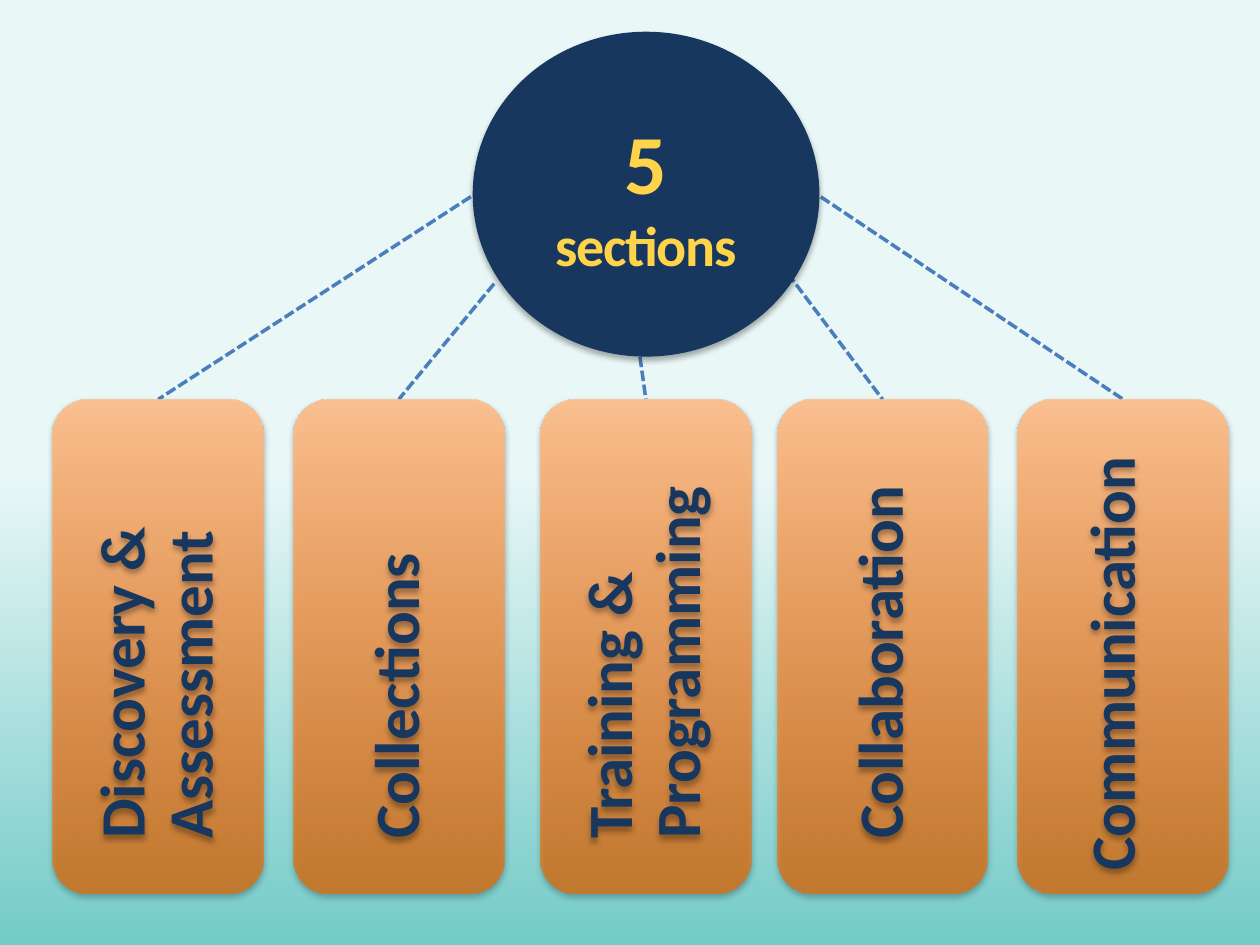
from dataclasses import dataclass

from lxml import etree
from pptx import Presentation
from pptx.dml.color import RGBColor
from pptx.enum.dml import MSO_LINE
from pptx.enum.shapes import MSO_CONNECTOR, MSO_SHAPE
from pptx.enum.text import MSO_ANCHOR, PP_ALIGN
from pptx.oxml.ns import qn
from pptx.util import Cm, Pt

STRAIGHT = MSO_CONNECTOR.STRAIGHT
ELLIPSE, ROUNDED = MSO_SHAPE.OVAL, MSO_SHAPE.ROUNDED_RECTANGLE
DASH = MSO_LINE.SQUARE_DOT
MIDDLE = MSO_ANCHOR.MIDDLE
CENTER, LEFT = PP_ALIGN.CENTER, PP_ALIGN.LEFT
TOP_SIDE = 0


@dataclass(frozen=True)
class Theme:
    font: str = "Calibri"
    navy: RGBColor = RGBColor.from_string("17375E")
    yellow: RGBColor = RGBColor.from_string("FFD44B")
    line: RGBColor = RGBColor.from_string("4B7EBC")
    teal: RGBColor = RGBColor.from_string("74CBC8")
    pale: RGBColor = RGBColor.from_string("E9F7F7")
    peach: RGBColor = RGBColor.from_string("FAC090")
    orange: RGBColor = RGBColor.from_string("E46C0A")
    number_size: Pt = Pt(48)
    word_size: Pt = Pt(32)
    label_size: Pt = Pt(36)


theme = Theme()


def add_shadow(shape):
    """Give the shape a soft shadow that falls straight down."""
    shape.shadow.inherit = False
    effects = shape._element.spPr.find(qn("a:effectLst"))
    outer = etree.SubElement(effects, qn("a:outerShdw"), blurRad="44450",
                             dist="27940", dir="5400000", rotWithShape="0")
    black = etree.SubElement(outer, qn("a:srgbClr"), val="000000")
    etree.SubElement(black, qn("a:alpha"), val="32000")


def add_span(para, text, size, color):
    """Add a bold run of text to the paragraph."""
    span = para.add_run()
    span.text = text
    for name, value in {"name": theme.font, "size": size, "bold": True}.items():
        setattr(span.font, name, value)
    span.font.color.rgb = color
    return span


deck = Presentation()
deck.slide_width, deck.slide_height = Cm(25.4), Cm(19.05)
page = deck.slides.add_slide(deck.slide_layouts[6])

# Background: teal at the bottom, pale from the middle up
backdrop = page.background.fill
backdrop.gradient()
backdrop.gradient_angle = 90
for stop, position, color in zip(backdrop.gradient_stops, (0, 0.5),
                                 (theme.teal, theme.pale)):
    stop.position, stop.color.rgb = position, color

# Sections: label, box left, line start, label length, label shift from box centre
sections = [
    ("Discovery & Assessment", 1.07, (9.73, 3.81), 7.82, (0, 0)),
    ("Collections", 5.92, (9.96, 5.72), 7.82, (0, 0)),
    ("Training & Programming", 10.9, (12.9, 7.19), 7.82, (0, 0)),
    ("Collaboration", 15.67, (15.88, 5.51), 7.82, (0, 0)),
    ("Communication", 20.52, (16.31, 3.81), 8.89, (-0.17, 0.1)),
]
box_top, box_width, box_height = 8.05, 4.24, 9.96
label_height = 2.21

# Dashed lines, behind everything else
connectors = []
for label, left, (start_x, start_y), length, shift in sections:
    connector = page.shapes.add_connector(
        STRAIGHT, Cm(start_x), Cm(start_y), Cm(left + box_width / 2), Cm(box_top))
    connector.line.color.rgb = theme.line
    for name, value in {"width": Pt(2), "dash_style": DASH}.items():
        setattr(connector.line, name, value)
    etree.SubElement(connector._element.spPr, qn("a:effectLst"))
    connectors.append(connector)

# Circle with the number of sections
circle = page.shapes.add_shape(ELLIPSE, Cm(9.53), Cm(0.64), Cm(6.99), Cm(6.55))
circle.fill.solid()
circle.fill.fore_color.rgb = theme.navy
circle.line.fill.background()
add_shadow(circle)
frame = circle.text_frame
for name, value in {"margin_left": 0, "margin_right": 0, "margin_top": 0,
                    "margin_bottom": 0, "vertical_anchor": MIDDLE,
                    "word_wrap": True}.items():
    setattr(frame, name, value)
para = frame.paragraphs[0]
para.alignment = CENTER
number = add_span(para, "5", theme.number_size, theme.yellow)
para.add_line_break()
word = add_span(para, "sections", theme.word_size, theme.yellow)
for span in (number, word):
    span.font._element.set("spc", "-70")

# Section boxes, each grouped with its upright label
inset = Cm(0.03)
for connector, (label, left, start, length, (shift_x, shift_y)) in zip(connectors, sections):
    group = page.shapes.add_group_shape()
    box = group.shapes.add_shape(ROUNDED, Cm(left), Cm(box_top),
                                 Cm(box_width), Cm(box_height))
    box.fill.gradient()
    box.fill.gradient_angle = 270
    for stop, position, color in zip(box.fill.gradient_stops, (0, 0.98),
                                     (theme.peach, theme.orange)):
        stop.position, stop.color.rgb = position, color
    orange = box._element.spPr.findall(".//" + qn("a:srgbClr"))[-1]
    etree.SubElement(orange, qn("a:alpha"), val="73000")
    box.line.fill.background()
    add_shadow(box)
    connector.end_connect(box, TOP_SIDE)

    center_x = left + box_width / 2 + shift_x
    center_y = box_top + box_height / 2 + shift_y
    caption = group.shapes.add_textbox(
        Cm(center_x - length / 2), Cm(center_y - label_height / 2),
        Cm(length), Cm(label_height))
    caption.rotation = 270
    add_shadow(caption)
    frame = caption.text_frame
    for name, value in {"margin_left": inset, "margin_right": inset,
                        "margin_top": inset, "margin_bottom": inset,
                        "vertical_anchor": MIDDLE, "word_wrap": True}.items():
        setattr(frame, name, value)
    para = frame.paragraphs[0]
    para.alignment, para.line_spacing = LEFT, 0.9
    add_span(para, label, theme.label_size, theme.navy)

deck.save("out.pptx")
